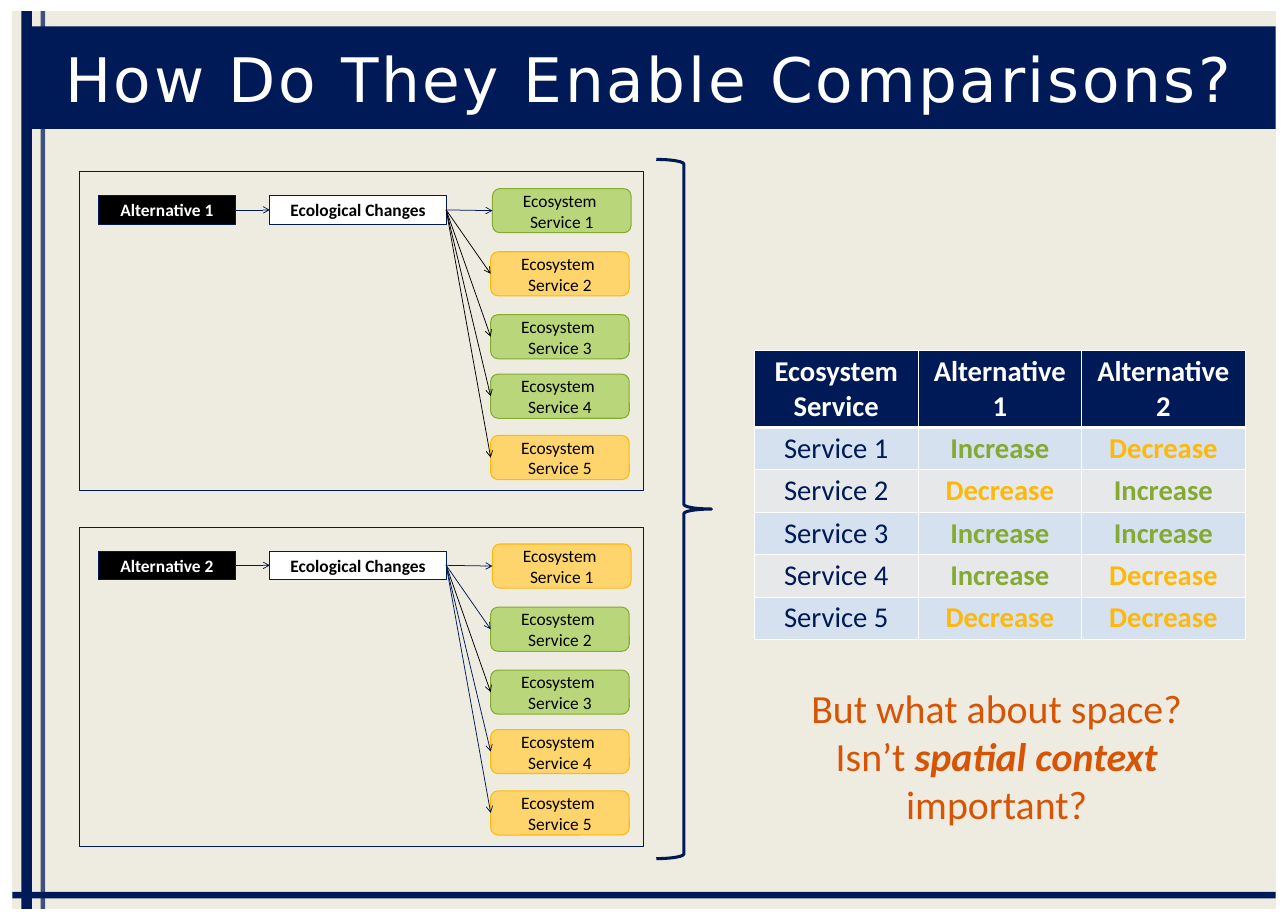
from dataclasses import dataclass

from lxml.etree import SubElement
from pptx import Presentation
from pptx.dml.color import RGBColor
from pptx.enum.shapes import MSO_CONNECTOR, MSO_SHAPE
from pptx.enum.text import MSO_ANCHOR, PP_ALIGN
from pptx.oxml.ns import qn
from pptx.util import Inches, Pt


@dataclass(frozen=True)
class Theme:
    navy: str = "001A57"
    paper: str = "EEECE1"
    white: str = "FFFFFF"
    black: str = "000000"
    green: str = "84AA33"
    light_green: str = "B9D77A"
    gold: str = "FEB80A"
    light_gold: str = "FED46C"
    orange: str = "D75404"
    band_blue: str = "D5E1EF"
    band_gray: str = "E7E8EA"
    font: str = "Calibri"
    title_font: str = "DejaVu Sans"
    title_size: int = 60
    question_size: int = 39
    table_size: int = 28
    box_size: int = 17


THEME = Theme()
WIDTH, HEIGHT = 17.5, 12.5
COLUMNS, ROWS = 210, 150  # grid cells of a twelfth of an inch


def across(columns):
    return Inches(WIDTH * columns / COLUMNS)


def down(rows):
    return Inches(HEIGHT * rows / ROWS)


def place(left, top, width, height):
    return across(left), down(top), across(width), down(height)


def color(value):
    return RGBColor.from_string(value)


class Page:
    def __init__(self, deck, theme):
        self.theme = theme
        self.shapes = deck.slides.add_slide(deck.slide_layouts[6]).shapes

    def span(self, para, text, size, ink, bold=False, italic=False, font=None, spacing=None):
        run = para.add_run()
        run.text = text
        run.font.name = font or self.theme.font
        run.font.size = Pt(size)
        run.font.color.rgb = color(ink)
        run.font.bold, run.font.italic = bold, italic
        if spacing:
            run.font._element.set("spc", str(spacing))

    def box(self, area, fill=None, line=None, weight=1.0, kind=MSO_SHAPE.RECTANGLE):
        box = self.shapes.add_shape(kind, *place(*area))
        box.shadow.inherit = False
        if fill:
            box.fill.solid()
            box.fill.fore_color.rgb = color(fill)
        else:
            box.fill.background()
        if line:
            box.line.color.rgb = color(line)
            box.line.width = Pt(weight)
        else:
            box.line.fill.background()
        return box

    def label(self, box, lines, ink, bold=False):
        frame = box.text_frame
        frame.word_wrap = True
        frame.vertical_anchor = MSO_ANCHOR.MIDDLE
        for index, text in enumerate(lines):
            para = frame.add_paragraph() if index else frame.paragraphs[0]
            para.alignment = PP_ALIGN.CENTER
            self.span(para, text, self.theme.box_size, ink, bold)

    def line(self, start, end, ink, weight):
        line = self.shapes.add_connector(
            MSO_CONNECTOR.STRAIGHT,
            across(start[0]), down(start[1]), across(end[0]), down(end[1]))
        line.line.color.rgb = color(ink)
        line.line.width = Pt(weight)
        SubElement(line._element.spPr, qn("a:effectLst"))
        return line

    def arrow(self, source, target, ink):
        arrow = self.line((0, 0), (1, 1), ink, 0.75)
        arrow.begin_connect(source, 3)
        arrow.end_connect(target, 1)
        SubElement(arrow.line._get_or_add_ln(), qn("a:tailEnd"), type="arrow")

    def title(self, area, text):
        frame = self.box(area, self.theme.navy).text_frame
        frame.word_wrap = True
        frame.vertical_anchor = MSO_ANCHOR.MIDDLE
        frame.margin_left = frame.margin_right = across(2)
        frame.margin_top = frame.margin_bottom = down(1.1)
        para = frame.paragraphs[0]
        para.alignment = PP_ALIGN.LEFT
        self.span(para, text, self.theme.title_size, self.theme.white,
                  font=self.theme.title_font, spacing=260)

    def cell(self, cell, text, fill, ink, bold, top, bottom):
        properties = cell._tc.get_or_add_tcPr()
        for side, weight in (("L", 1), ("R", 1), ("T", top), ("B", bottom)):
            edge = SubElement(properties, qn(f"a:ln{side}"), w=str(Pt(weight)))
            SubElement(SubElement(edge, qn("a:solidFill")), qn("a:srgbClr"), val=self.theme.white)
        cell.fill.solid()
        cell.fill.fore_color.rgb = color(fill)
        para = cell.text_frame.paragraphs[0]
        para.alignment = PP_ALIGN.CENTER
        self.span(para, text, self.theme.table_size, ink, bold)

    def table(self, left, top, column_width, header_height, row_height, records):
        theme = self.theme
        area = place(left, top, column_width * len(records[0]),
                     header_height + row_height * (len(records) - 1))
        table = self.shapes.add_table(len(records), len(records[0]), *area).table
        table.horz_banding = False
        for column in table.columns:
            column.width = across(column_width)
        inks = {"Increase": theme.green, "Decrease": theme.gold}
        for i, record in enumerate(records):
            table.rows[i].height = down(row_height if i else header_height)
            fill = (theme.band_blue if i % 2 else theme.band_gray) if i else theme.navy
            for j, text in enumerate(record):
                ink = inks.get(text, theme.navy) if i else theme.white
                self.cell(table.cell(i, j), text, fill, ink, i == 0 or j > 0,
                          top=3 if i == 1 else 1, bottom=1 if i else 3)

    def panel(self, top, name, effects, arrow_inks):
        theme = self.theme
        styles = {"Increase": (theme.light_green, theme.green),
                  "Decrease": (theme.light_gold, theme.gold)}
        self.box((13, top, 92, 52), line=theme.navy)
        alternative = self.box((16, top + 3.9, 22.45, 4.65), theme.black, theme.navy, 0.75)
        self.label(alternative, [name], theme.white, bold=True)
        changes = self.box((44, top + 3.9, 28.75, 4.65), theme.white, theme.navy, 0.75)
        self.label(changes, ["Ecological Changes"], theme.black, bold=True)
        self.arrow(alternative, changes, theme.navy)
        offsets = (2.75, 13.05, 23.3, 33, 43)
        for number, (offset, effect, ink) in enumerate(zip(offsets, effects, arrow_inks), 1):
            left = 80.3 if number == 1 else 80
            service = self.box((left, top + offset, 22.6, 7.2), *styles[effect],
                               kind=MSO_SHAPE.ROUNDED_RECTANGLE)
            self.label(service, ["Ecosystem ", f"Service {number}"], theme.black)
            self.arrow(changes, service, ink)

    def question(self, area, spans):
        frame = self.shapes.add_textbox(*place(*area)).text_frame
        frame.word_wrap = True
        para = frame.paragraphs[0]
        para.alignment = PP_ALIGN.CENTER
        for text, strong in spans:
            self.span(para, text, self.theme.question_size, self.theme.orange, strong, strong)


def main():
    deck = Presentation()
    deck.slide_width, deck.slide_height = Inches(WIDTH), Inches(HEIGHT)
    page = Page(deck, THEME)
    navy, black = THEME.navy, THEME.black

    # Background and frame bars
    page.box((2, 1.8, 206, 146.4), THEME.paper, THEME.paper)
    for bar in ((3.5, 1.8, 1.7, 146.4), (5.2, 4.3, 3.5, 16.7), (2, 145.4, 206, 1.1)):
        page.box(bar, navy)
    rule = page.line((7, 148.2), (7, 1.8), navy, 4.5)
    tint = rule._element.spPr.find(".//" + qn("a:srgbClr"))
    SubElement(tint, qn("a:alpha"), val="73000")

    # Title
    page.title((8.65, 4.3, 199.35, 16.7), "How Do They Enable Comparisons?")

    # Alternatives and their effect on each service
    first = ("Increase", "Decrease", "Increase", "Increase", "Decrease")
    second = ("Decrease", "Increase", "Increase", "Decrease", "Decrease")
    page.panel(28, "Alternative 1", first, (navy, black, black, black, black))
    page.panel(85.95, "Alternative 2", second, (navy, navy, black, navy, navy))
    page.box((107, 26, 9, 114), line=navy, weight=3, kind=MSO_SHAPE.RIGHT_BRACE)

    # Comparison table
    records = [("Ecosystem Service", "Alternative 1", "Alternative 2")]
    records += [(f"Service {n}", *pair) for n, pair in enumerate(zip(first, second), 1)]
    page.table(123, 57.1, 26.67, 12.5, 6.9, records)

    # Closing question
    page.question((125, 110.9, 75, 24.8), [
        ("But what about space? Isn’t ", False),
        ("spatial context ", True),
        ("important?", False)])

    deck.save("out.pptx")


if __name__ == "__main__":
    main()
